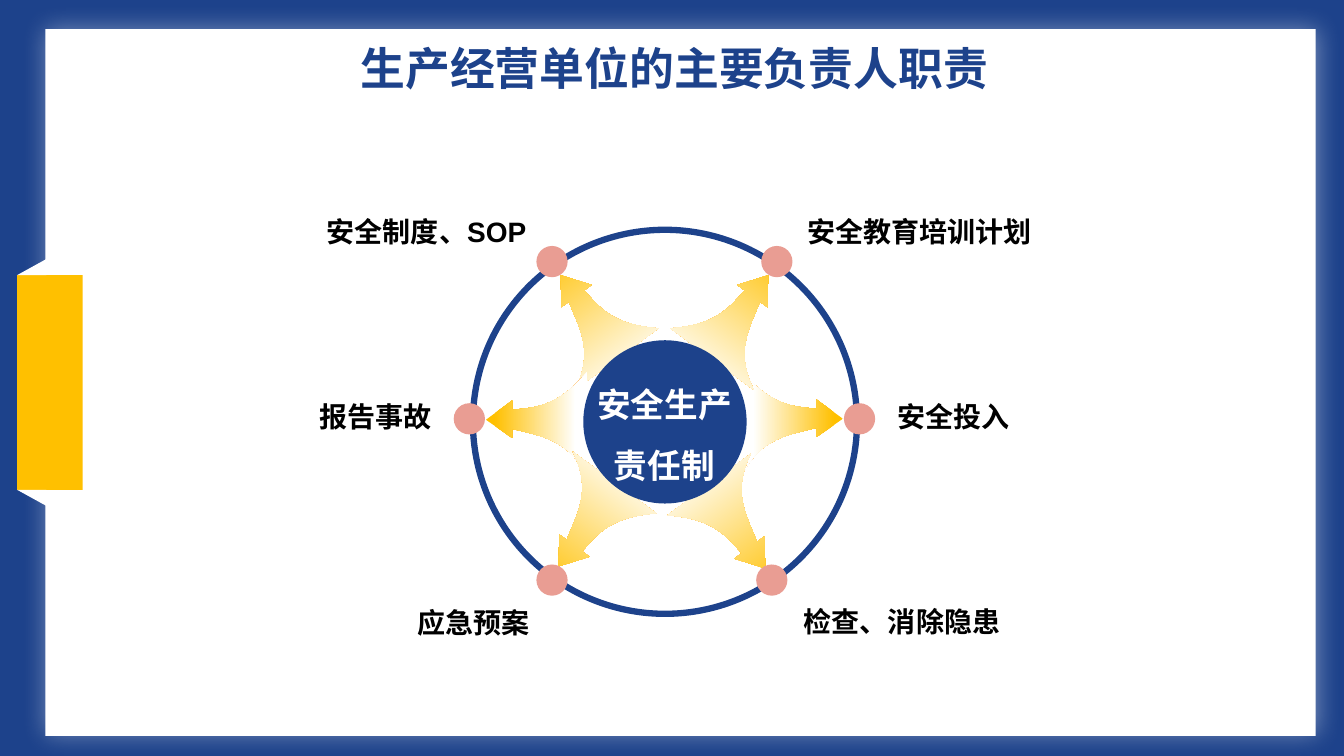
from lxml import etree
from pptx import Presentation
from pptx.dml.color import RGBColor
from pptx.enum.shapes import MSO_SHAPE
from pptx.enum.text import MSO_AUTO_SIZE, PP_ALIGN
from pptx.oxml.ns import qn
from pptx.util import Inches, Pt

BLUE, YELLOW, PINK, WHITE, BLACK = "1D428B", "FFC000", "E99D93", "FFFFFF", "000000"
ARROW_WIDTH, ARROW_HEIGHT, ARROW_TILT = 1, 1.03, 53.6
DOT_SIZE = 0.31

# Each curve lists two control points and its end
ARROW_START = (0, 0)
UPPER_CURVE = [(0.29, 0.34), (0.5, 0.35), (0.74, 0.37)]
ARROW_HEAD = [(0.74, 0.28), (1, 0.47), (0.74, 0.65), (0.74, 0.56)]
LOWER_CURVE = [(0.47, 0.63), (0.19, 0.65), (0, ARROW_HEIGHT)]

# Centre x, centre y, horizontal side, vertical side, rotation
ARROWS = [
    (7.86, 4.2, 1, 1, 0),
    (5.82, 3.16, -1, 1, ARROW_TILT),
    (5.32, 4.21, -1, 1, 0),
    (7.36, 3.16, 1, 1, -ARROW_TILT),
    (5.8, 5.19, -1, -1, -ARROW_TILT),
    (7.33, 5.21, 1, -1, ARROW_TILT),
]
DOTS = [(5.32, 2.44), (7.55, 2.44), (8.37, 4), (4.5, 4), (5.32, 5.6), (7.5, 5.6)]
# Text, left, top, width, alignment, wrap
LABELS = [
    ("安全制度、SOP", 3.12, 2.08, 2.2, PP_ALIGN.RIGHT, False),
    ("安全教育培训计划", 7.91, 2.08, 2.69, PP_ALIGN.LEFT, True),
    ("安全投入", 8.79, 3.91, 1.32, PP_ALIGN.RIGHT, False),
    ("检查、消除隐患", 7.85, 5.95, 2.17, PP_ALIGN.RIGHT, False),
    ("报告事故", 3.06, 3.91, 1.32, PP_ALIGN.RIGHT, False),
    ("应急预案", 4.03, 5.96, 1.32, PP_ALIGN.RIGHT, False),
]


def color(value):
    return RGBColor.from_string(value)


def add_filled(slide, kind, left, top, width, height, fill):
    shape = slide.shapes.add_shape(
        kind, Inches(left), Inches(top), Inches(width), Inches(height))
    shape.shadow.inherit = False
    shape.fill.solid()
    shape.fill.fore_color.rgb = color(fill)
    shape.line.fill.background()
    return shape


def add_text(slide, lines, left, top, width, height, size, fill, align,
             wrap=True, font="Arial", spacing=None):
    box = slide.shapes.add_textbox(
        Inches(left), Inches(top), Inches(width), Inches(height))
    frame = box.text_frame
    frame.word_wrap = wrap
    frame.auto_size = MSO_AUTO_SIZE.SHAPE_TO_FIT_TEXT
    frame.text = "\n".join(lines)
    for paragraph in frame.paragraphs:
        paragraph.alignment = align
        paragraph.line_spacing = spacing
        paragraph.font.name = font
        paragraph.font.size = Pt(size)
        paragraph.font.bold = True
        paragraph.font.color.rgb = color(fill)


def add_glow_shadow(shape):
    """Give the shape a soft white outer shadow."""
    effects = shape._element.spPr.find(qn("a:effectLst"))
    shadow = etree.SubElement(effects, qn("a:outerShdw"), blurRad=str(Pt(18)),
                              dist=str(Pt(1)), dir="0", algn="ctr", rotWithShape="0")
    tint = etree.SubElement(shadow, qn("a:srgbClr"), val=WHITE)
    etree.SubElement(tint, qn("a:alpha"), val="40000")


def add_frame(slide, left, top, width, height):
    """White panel with the yellow tab folded around its left edge."""
    panel = add_filled(slide, MSO_SHAPE.RECTANGLE, left, top, width, height, WHITE)
    add_glow_shadow(panel)
    tab_left, tab_top, tab_height, fold = left - 0.28, top + 2.44, 2.13, 0.16
    add_filled(slide, MSO_SHAPE.RECTANGLE, tab_left, tab_top, 0.65, tab_height, YELLOW)
    for fold_top, flips in ((tab_top - fold, ["flipH"]),
                            (tab_top + tab_height, ["flipH", "flipV"])):
        triangle = add_filled(slide, MSO_SHAPE.RIGHT_TRIANGLE,
                              tab_left, fold_top, 0.29, fold, WHITE)
        for flip in flips:
            triangle._element.spPr.get_or_add_xfrm().set(flip, "1")


def bend(segments):
    """Turn three straight segments into one cubic curve."""
    cubic = etree.Element(qn("a:cubicBezTo"))
    segments[0].addprevious(cubic)
    for segment in segments:
        cubic.append(segment[0])
        segment.getparent().remove(segment)


def add_arrow(slide, center_x, center_y, side_x, side_y, rotation):
    outline = [ARROW_START] + UPPER_CURVE + ARROW_HEAD + LOWER_CURVE
    points = [(Inches(center_x + side_x * (x - ARROW_WIDTH / 2)),
               Inches(center_y + side_y * (y - ARROW_HEIGHT / 2))) for x, y in outline]
    builder = slide.shapes.build_freeform(*points[0])
    builder.add_line_segments(points[1:], close=True)
    arrow = builder.convert_to_shape()
    segments = list(arrow._element.iter(qn("a:lnTo")))
    bend(segments[:3])
    bend(segments[7:10])
    arrow.rotation = rotation
    arrow.shadow.inherit = False
    arrow.line.fill.background()
    arrow.fill.gradient()
    arrow.fill.gradient_angle = 180 if side_x > 0 else 0
    for stop, position, value in zip(arrow.fill.gradient_stops, (0.08, 0.89), (YELLOW, WHITE)):
        stop.position = position
        stop.color.rgb = color(value)


def add_wheel(slide, left, top, size):
    """Hub, arrows, ring and dots inside a square box."""
    for center_x, center_y, *direction in ARROWS:
        add_arrow(slide, left + center_x - 4.69, top + center_y - 2.28, *direction)
    hub = 1.62
    add_filled(slide, MSO_SHAPE.OVAL, left + (size - hub) / 2, top + (size - hub) / 2,
               hub, hub, BLUE)
    add_text(slide, ["安全生产", "责任制"], left + 1.02, top + 1.28, 1.76, 1.24,
             24, WHITE, PP_ALIGN.CENTER, spacing=1.5)
    ring = add_filled(slide, MSO_SHAPE.OVAL, left, top, size, size, WHITE)
    ring.fill.background()
    ring.line.color.rgb = color(BLUE)
    ring.line.width = Pt(4.5)
    for x, y in DOTS:
        add_filled(slide, MSO_SHAPE.OVAL, left + x - 4.69, top + y - 2.28,
                   DOT_SIZE, DOT_SIZE, PINK)


def main():
    presentation = Presentation()
    presentation.slide_width, presentation.slide_height = Inches(13.33), Inches(7.5)
    slide = presentation.slides.add_slide(presentation.slide_layouts[6])
    slide.background.fill.solid()
    slide.background.fill.fore_color.rgb = color(BLUE)
    add_frame(slide, 0.45, 0.29, 12.6, 7.01)
    add_wheel(slide, 4.69, 2.28, 3.81)
    for text, left, top, width, align, wrap in LABELS:
        add_text(slide, [text], left, top, width, 0.44, 20, BLACK, align, wrap)
    add_text(slide, ["生产经营单位的主要负责人职责"], 3.06, 0.36, 7.26, 0.64,
             32, BLUE, PP_ALIGN.CENTER, font="Noto Sans CJK SC")
    presentation.save("out.pptx")


if __name__ == "__main__":
    main()
